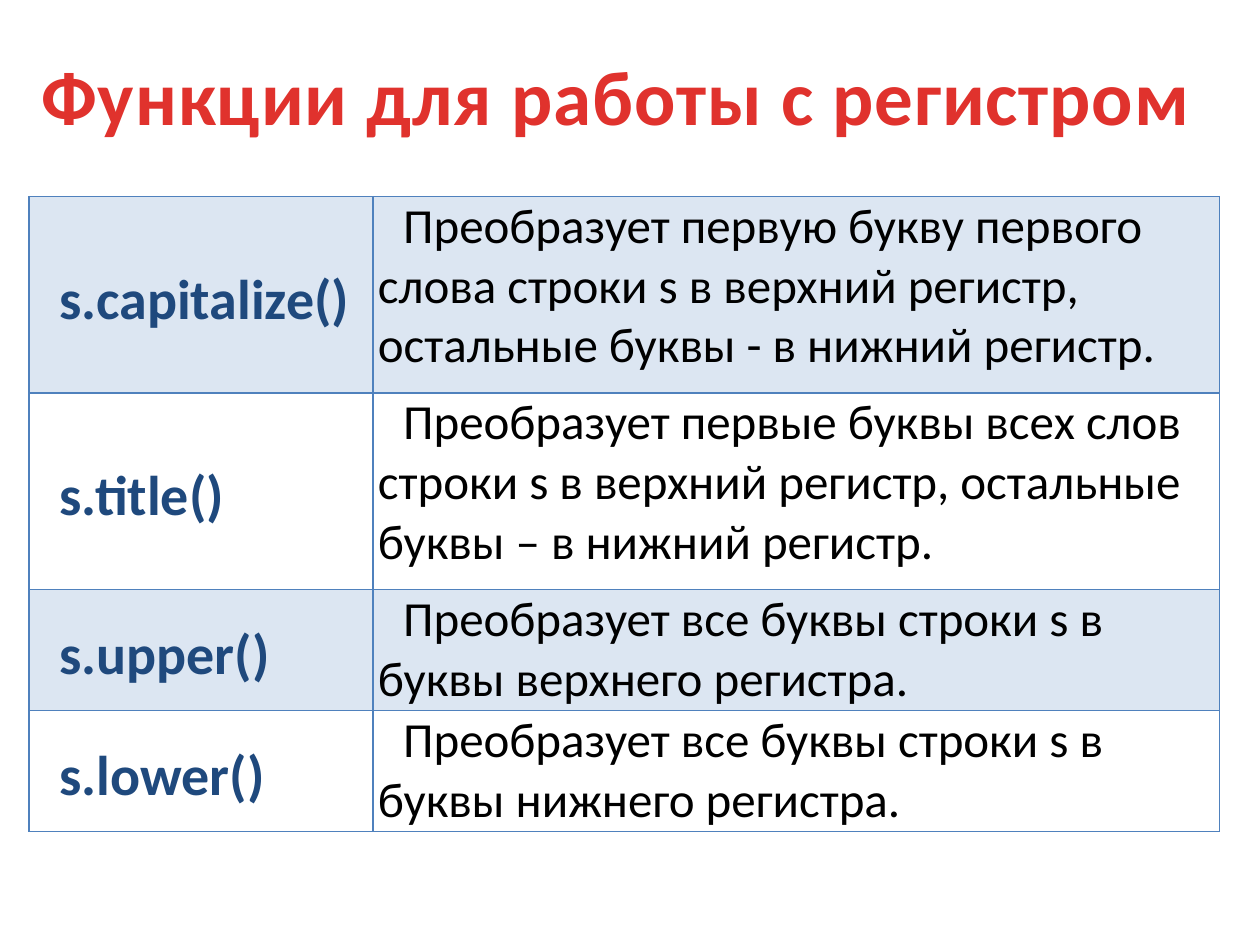
from lxml import etree
from pptx import Presentation
from pptx.dml.color import RGBColor
from pptx.enum.text import MSO_ANCHOR, MSO_AUTO_SIZE, PP_ALIGN
from pptx.oxml.ns import qn
from pptx.util import Inches, Pt

MIDDLE, TOP = MSO_ANCHOR.MIDDLE, MSO_ANCHOR.TOP
JUSTIFY = PP_ALIGN.JUSTIFY
GROW = MSO_AUTO_SIZE.SHAPE_TO_FIT_TEXT

RED = RGBColor(0xE0, 0x32, 0x2D)
NAVY = RGBColor(0x1F, 0x49, 0x7D)
BLACK = RGBColor(0, 0, 0)
BLUE = RGBColor(0x4F, 0x81, 0xBD)
PALE = RGBColor(0xDC, 0xE6, 0xF2)

FONT = "Calibri"
HEAD = {"name": FONT, "size": Pt(44), "bold": True}
CODE = {"name": FONT, "size": Pt(32), "bold": True}
BODY = {"name": FONT, "size": Pt(28), "bold": False}

COLS = (2.73, 6.72)
ROWS = (
    (1.56, "s.capitalize()",
     "Преобразует первую букву первого слова строки s в верхний регистр, "
     "остальные буквы - в нижний регистр."),
    (1.56, "s.title()",
     "Преобразует первые буквы всех слов строки s в верхний регистр, "
     "остальные буквы – в нижний регистр."),
    (0.96, "s.upper()",
     "Преобразует все буквы строки s в буквы верхнего регистра."),
    (0.96, "s.lower()",
     "Преобразует все буквы строки s в буквы нижнего регистра."),
)


def write(par, text, form, color, lead):
    run = par.add_run()
    run.text = text
    for key, value in form.items():
        setattr(run.font, key, value)
    run.font.color.rgb = color
    par.line_spacing = lead
    return run


def add_title(slide, left, top, width, height):
    box = slide.shapes.add_textbox(left, top, width, height)
    frame = box.text_frame
    frame.word_wrap = False
    frame.auto_size = GROW
    par = frame.paragraphs[0]
    par.alignment = JUSTIFY
    run = write(par, "Функции для работы с регистром", HEAD, RED, 1.15)
    run.font._element.set("spc", "50")


def add_edges(cell):
    props = cell._tc.get_or_add_tcPr()
    for side in ("a:lnL", "a:lnR", "a:lnT", "a:lnB"):
        line = etree.SubElement(props, qn(side), w=str(Pt(1)))
        fill = etree.SubElement(line, qn("a:solidFill"))
        etree.SubElement(fill, qn("a:srgbClr"), val=str(BLUE))


def fill_cell(cell, text, form, color, lead, anchor, shaded):
    add_edges(cell)
    if shaded:
        cell.fill.solid()
        cell.fill.fore_color.rgb = PALE
    else:
        cell.fill.background()
    cell.margin_left = cell.margin_right = Inches(0.04)
    cell.margin_top = cell.margin_bottom = 0
    cell.vertical_anchor = anchor
    par = cell.text_frame.paragraphs[0]
    par._p.get_or_add_pPr().set("indent", str(Inches(0.2)))
    write(par, text, form, color, lead)


def add_grid(slide, left, top, width, height):
    table = slide.shapes.add_table(
        len(ROWS), len(COLS), left, top, width, height).table
    table.first_row = table.horz_banding = False
    for col, size in zip(table.columns, COLS):
        col.width = Inches(size)
    for i, (size, name, note) in enumerate(ROWS):
        table.rows[i].height = Inches(size)
        shaded = i % 2 == 0
        fill_cell(table.cell(i, 0), name, CODE, NAVY, 1.15, MIDDLE, shaded)
        fill_cell(table.cell(i, 1), note, BODY, BLACK, 1.0, TOP, shaded)


def main():
    deck = Presentation()
    deck.slide_width, deck.slide_height = Inches(10), Inches(7.5)
    slide = deck.slides.add_slide(deck.slide_layouts[6])
    # Table of functions
    add_grid(slide, Inches(0.23), Inches(1.56), Inches(9.45), Inches(5.04))
    # Heading
    add_title(slide, Inches(0.23), Inches(0.23), Inches(9.42), Inches(0.9))
    deck.save("out.pptx")


if __name__ == "__main__":
    main()
